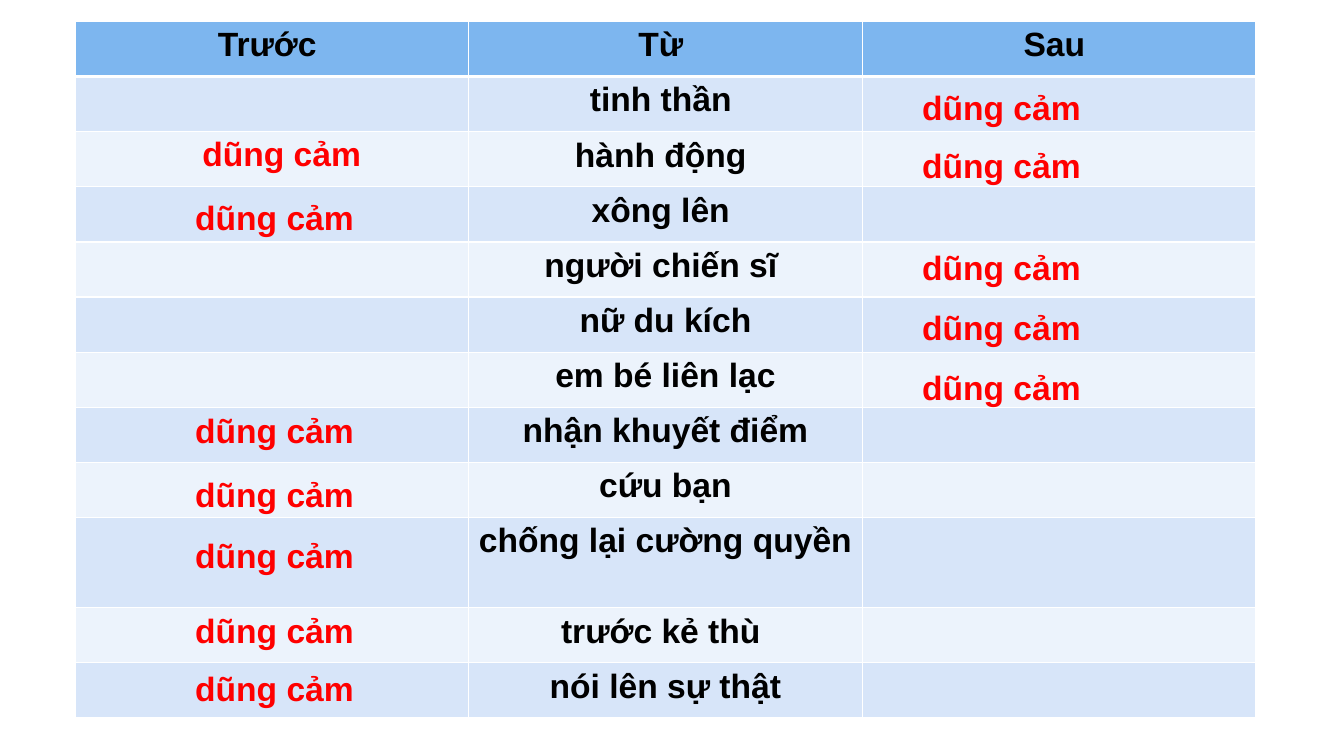
from lxml import etree
from pptx import Presentation
from pptx.dml.color import RGBColor
from pptx.enum import text as t
from pptx.oxml import ns
from pptx.util import Cm, Pt

THEME = {
    "font": "Arial", "size": Pt(24),
    "ink": "000000", "mark": "FF0000", "line": "FFFFFF",
    "head": "7DB6EF", "bands": ("ECF3FC", "D7E5F9"),
}
WORDS = [
    "Từ ", "tinh thần ", "hành động ", "xông lên ", "người chiến sĩ ",
    "nữ du kích", "em bé liên lạc", "nhận khuyết điểm", "cứu bạn",
    "chống lại cường quyền", "trước kẻ thù ", "nói lên sự thật",
]
MARKS = {
    22.99: (2.06, 3.53, 6.1, 7.62, 9.12),
    4.67: (4.83, 10.21, 11.81, 13.36, 15.24, 16.71),
    4.85: (3.23,),
}


def write(frame, words, color, align):
    para = frame.paragraphs[0]
    para.alignment = align
    run = para.add_run()
    run.text = words
    style = {"name": THEME["font"], "size": THEME["size"], "bold": True}
    for key, value in style.items():
        setattr(run.font, key, value)
    run.font.color.rgb = RGBColor.from_string(color)


def edge(cell, side, width):
    """Draw one border; call before the cell gets its fill."""
    props = cell._tc.get_or_add_tcPr()
    line = etree.SubElement(props, ns.qn(f"a:ln{side}"), w=str(Pt(width)))
    fill = etree.SubElement(line, ns.qn("a:solidFill"))
    etree.SubElement(fill, ns.qn("a:srgbClr"), val=THEME["line"])


prs = Presentation()
prs.slide_width, prs.slide_height = Cm(33.87), Cm(19.05)
slide = prs.slides.add_slide(prs.slide_layouts[6])

# Word table
frame = slide.shapes.add_table(len(WORDS), 3, Cm(1.89), Cm(0.54), Cm(29.76), Cm(17.56))
table = frame.table
for col in table.columns:
    col.width = Cm(9.92)

for i, word in enumerate(WORDS):
    table.rows[i].height = Cm(2.27 if "cường quyền" in word else 1.39)
    row = ("Trước ", word, "Sau ") if i == 0 else ("", word, "")
    for j, label in enumerate(row):
        cell = table.cell(i, j)
        for side in "LRTB":
            thick = (i, side) in ((0, "B"), (1, "T"))
            edge(cell, side, 3 if thick else 1)
        cell.fill.solid()
        shade = THEME["bands"][i % 2] if i else THEME["head"]
        cell.fill.fore_color.rgb = RGBColor.from_string(shade)
        if label:
            write(cell.text_frame, label, THEME["ink"], t.PP_ALIGN.CENTER)

# Answers placed before or after each word
for left, tops in MARKS.items():
    for top in tops:
        box = slide.shapes.add_textbox(Cm(left), Cm(top), Cm(6.96), Cm(1.27))
        box.text_frame.word_wrap = True
        box.text_frame.auto_size = t.MSO_AUTO_SIZE.SHAPE_TO_FIT_TEXT
        write(box.text_frame, "dũng cảm", THEME["mark"], t.PP_ALIGN.LEFT)

prs.save("out.pptx")
